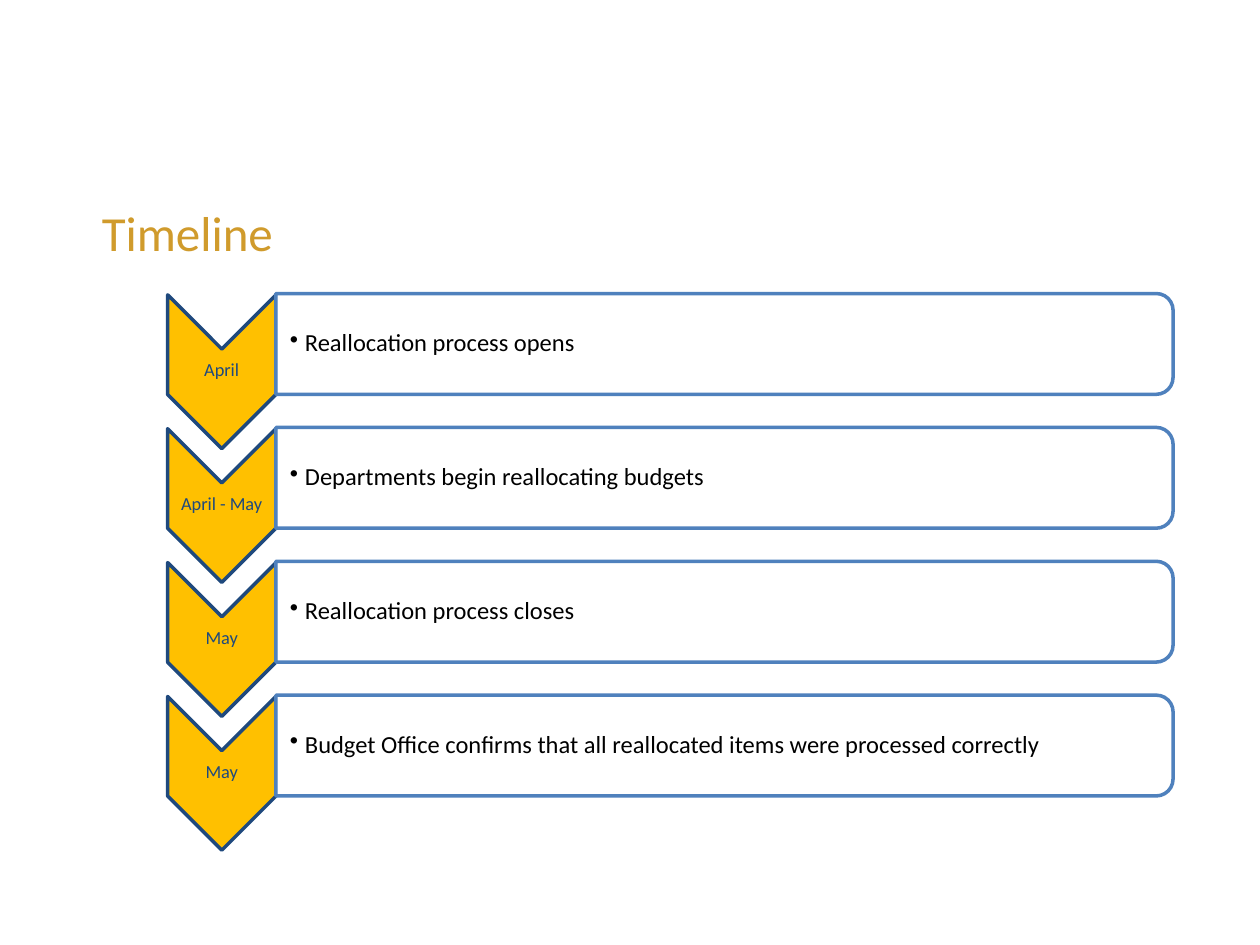
from dataclasses import dataclass

from lxml import etree
from pptx import Presentation
from pptx.dml.color import RGBColor
from pptx.enum.shapes import MSO_SHAPE
from pptx.enum.text import MSO_ANCHOR, PP_ALIGN
from pptx.oxml.ns import qn
from pptx.util import Inches, Pt

CHEVRON = MSO_SHAPE.CHEVRON
PANEL = MSO_SHAPE.ROUND_2_SAME_RECTANGLE
TOP, MIDDLE = MSO_ANCHOR.TOP, MSO_ANCHOR.MIDDLE
LEFT, CENTER = PP_ALIGN.LEFT, PP_ALIGN.CENTER


@dataclass(frozen=True)
class Theme:
    face: str = "Calibri"
    gold: str = "D09B2C"
    amber: str = "FFC000"
    navy: str = "1F497D"
    blue: str = "4F81BD"
    white: str = "FFFFFF"
    black: str = "000000"
    title: float = 28
    label: float = 10.5
    body: float = 14
    line: float = 2


THEME = Theme()
STEPS = [
    ("April", "Reallocation process opens"),
    ("April - May", "Departments begin reallocating budgets"),
    ("May", "Reallocation process closes"),
    ("May", "Budget Office confirms that all reallocated items were processed correctly"),
]
PITCH = 4.25 / len(STEPS)


def assign(item, values):
    for name, value in values.items():
        setattr(item, name, value)


def add_form(slide, kind, box, fill, line):
    form = slide.shapes.add_shape(kind, *map(Inches, box))
    form.rotation = 90
    form.shadow.inherit = False
    form.fill.solid()
    form.fill.fore_color.rgb = RGBColor.from_string(fill)
    form.line.color.rgb = RGBColor.from_string(line)
    form.line.width = Pt(THEME.line)
    return form


def add_text(slide, box, text, size, color, align=LEFT, anchor=TOP):
    frame = slide.shapes.add_textbox(*map(Inches, box)).text_frame
    assign(frame, {"word_wrap": True, "vertical_anchor": anchor})
    para = frame.paragraphs[0]
    para.alignment = align
    run = para.add_run()
    run.text = text
    assign(run.font, {"name": THEME.face, "size": Pt(size)})
    run.font.color.rgb = RGBColor.from_string(color)
    return frame


def tighten(frame, left=0.01):
    edge = Inches(0.01)
    assign(frame, {"margin_left": Inches(left), "margin_right": edge,
                   "margin_top": edge, "margin_bottom": edge})
    frame.paragraphs[0].line_spacing = 0.9


def add_bullet(para):
    para.level = 1
    props = para._p.get_or_add_pPr()
    props.set("marL", str(Inches(0.12)))
    props.set("indent", str(-Inches(0.12)))
    etree.SubElement(props, qn("a:buChar")).set("char", "•")


def fade(form, share):
    color = form._element.spPr.find(qn("a:solidFill"))[0]
    etree.SubElement(color, qn("a:alpha")).set("val", str(share * 1000))


def add_step(slide, drop, label, body):
    add_form(slide, CHEVRON, (1.15, 2.52 + drop, 1.22, 0.86), THEME.amber, THEME.navy)
    month = add_text(slide, (1.33, 2.76 + drop, 0.86, 0.37), label,
                     THEME.label, THEME.navy, CENTER, MIDDLE)
    tighten(month)
    panel = add_form(slide, PANEL, (5.35, -0.83 + drop, 0.8, 7.12), THEME.white, THEME.blue)
    fade(panel, 90)
    task = add_text(slide, (2.19, 2.37 + drop, 7.08, 0.72), body,
                    THEME.body, THEME.black, LEFT, MIDDLE)
    tighten(task, 0.11)
    add_bullet(task.paragraphs[0])


def main():
    deck = Presentation()
    assign(deck, {"slide_width": Inches(10), "slide_height": Inches(7.5)})
    slide = deck.slides.add_slide(deck.slide_layouts[6])
    add_text(slide, (0.71, 1.56, 6.18, 0.57), "Timeline", THEME.title, THEME.gold)
    for row, (label, body) in enumerate(STEPS):
        add_step(slide, row * PITCH, label, body)
    deck.save("out.pptx")


if __name__ == "__main__":
    main()
